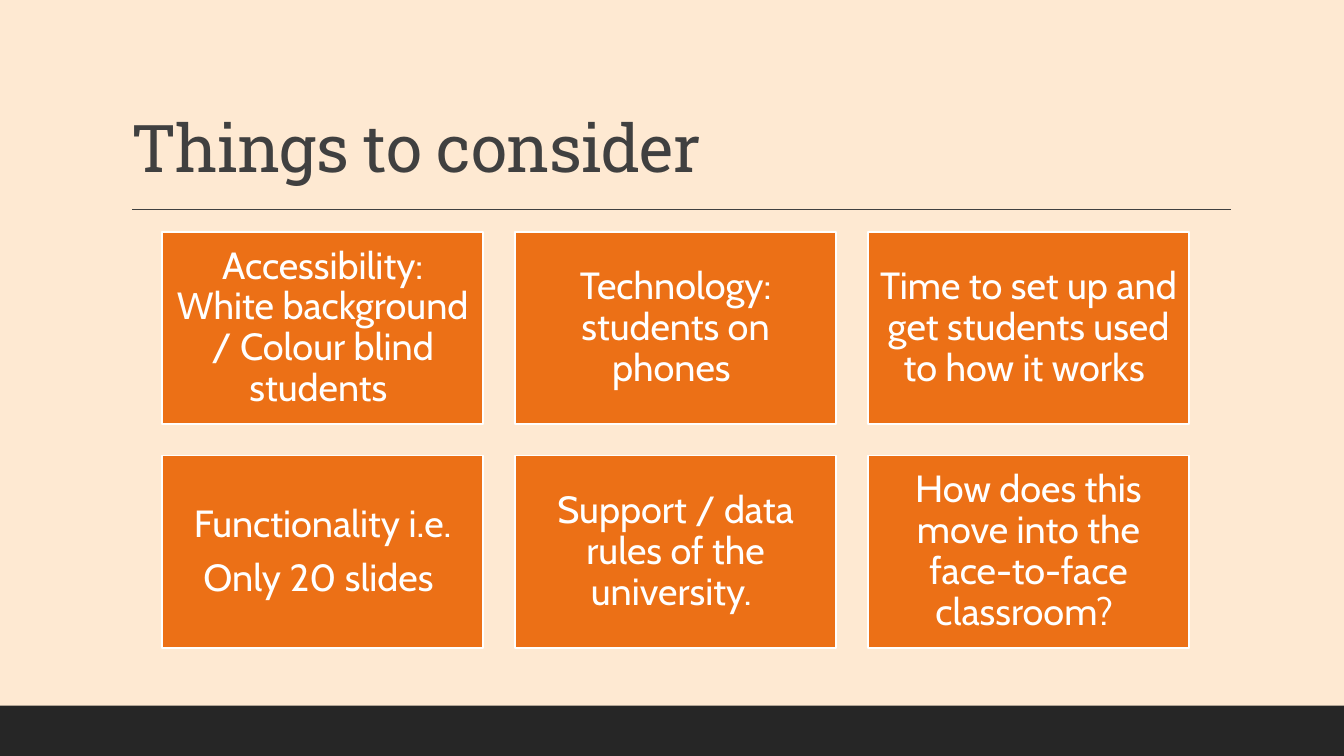
from pptx import Presentation
from pptx.dml.color import RGBColor
from pptx.enum.shapes import MSO_CONNECTOR, MSO_SHAPE
from pptx.enum.text import MSO_ANCHOR, MSO_AUTO_SIZE, PP_ALIGN
from pptx.oxml.ns import qn
from pptx.util import Inches, Pt
from lxml.etree import SubElement


def color(value):
    return RGBColor.from_string(value)


def add_span(para, text, font_name, size, font_color):
    span = para.add_run()
    span.text = text
    span.font.name = font_name
    span.font.size = Pt(size)
    span.font.color.rgb = color(font_color)
    return span


deck = Presentation()
deck.slide_width = Inches(13.33)
deck.slide_height = Inches(7.5)
page = deck.slides.add_slide(deck.slide_layouts[5])
page.background.fill.solid()
page.background.fill.fore_color.rgb = color("FEE9D2")

footer_band = page.shapes.add_shape(
    MSO_SHAPE.RECTANGLE, 0, Inches(7), deck.slide_width, Inches(0.5)
)
footer_band.shadow.inherit = False
footer_band.fill.solid()
footer_band.fill.fore_color.rgb = color("262626")
footer_band.line.fill.background()

title_rule = page.shapes.add_connector(
    MSO_CONNECTOR.STRAIGHT, Inches(1.31), Inches(2.08), Inches(12.21), Inches(2.08)
)
title_rule.line.color.rgb = color("404040")
title_rule.line.width = Pt(1)
SubElement(title_rule._element.spPr, qn("a:effectLst"))

title = page.shapes.title
title.left, title.top = Inches(1.2), Inches(0.31)
title.width, title.height = Inches(11), Inches(1.59)
title_frame = title.text_frame
title_frame.auto_size = MSO_AUTO_SIZE.NONE
title_frame.vertical_anchor = MSO_ANCHOR.BOTTOM
title_para = title_frame.paragraphs[0]
title_para.alignment = PP_ALIGN.LEFT
title_para.line_spacing = 0.9
title_span = add_span(title_para, "Things to consider", "Roboto Slab", 47, "404040")
title_span.font._element.set("spc", "-50")

considerations = [
    ["Accessibility: White background / Colour blind students "],
    ["Technology: students on phones "],
    ["Time to set up and get students used to how it works "],
    ["Functionality i.e.", "Only 20 slides "],
    ["Support / data rules of the university. "],
    ["How does this move into the face-to-face classroom? "],
]
columns = 3
for index, lines in enumerate(considerations):
    row, column = divmod(index, columns)
    box = page.shapes.add_shape(
        MSO_SHAPE.RECTANGLE,
        Inches(1.61 + 3.5 * column),
        Inches(2.3 + 2.22 * row),
        Inches(3.18),
        Inches(1.91),
    )
    box.shadow.inherit = False
    box.fill.solid()
    box.fill.fore_color.rgb = color("EC7016")
    box.line.color.rgb = color("FFFFFF")
    box.line.width = Pt(1.25)
    frame = box.text_frame
    frame.word_wrap = True
    frame.vertical_anchor = MSO_ANCHOR.MIDDLE
    frame.margin_left = frame.margin_right = Inches(0.11)
    frame.margin_top = frame.margin_bottom = Inches(0.11)
    for number, line in enumerate(lines):
        para = frame.add_paragraph() if number else frame.paragraphs[0]
        para.alignment = PP_ALIGN.CENTER
        para.line_spacing = 0.9
        para.space_after = Pt(9.45)
        add_span(para, line, "Cabin", 27, "FFFFFF")

deck.save("out.pptx")
